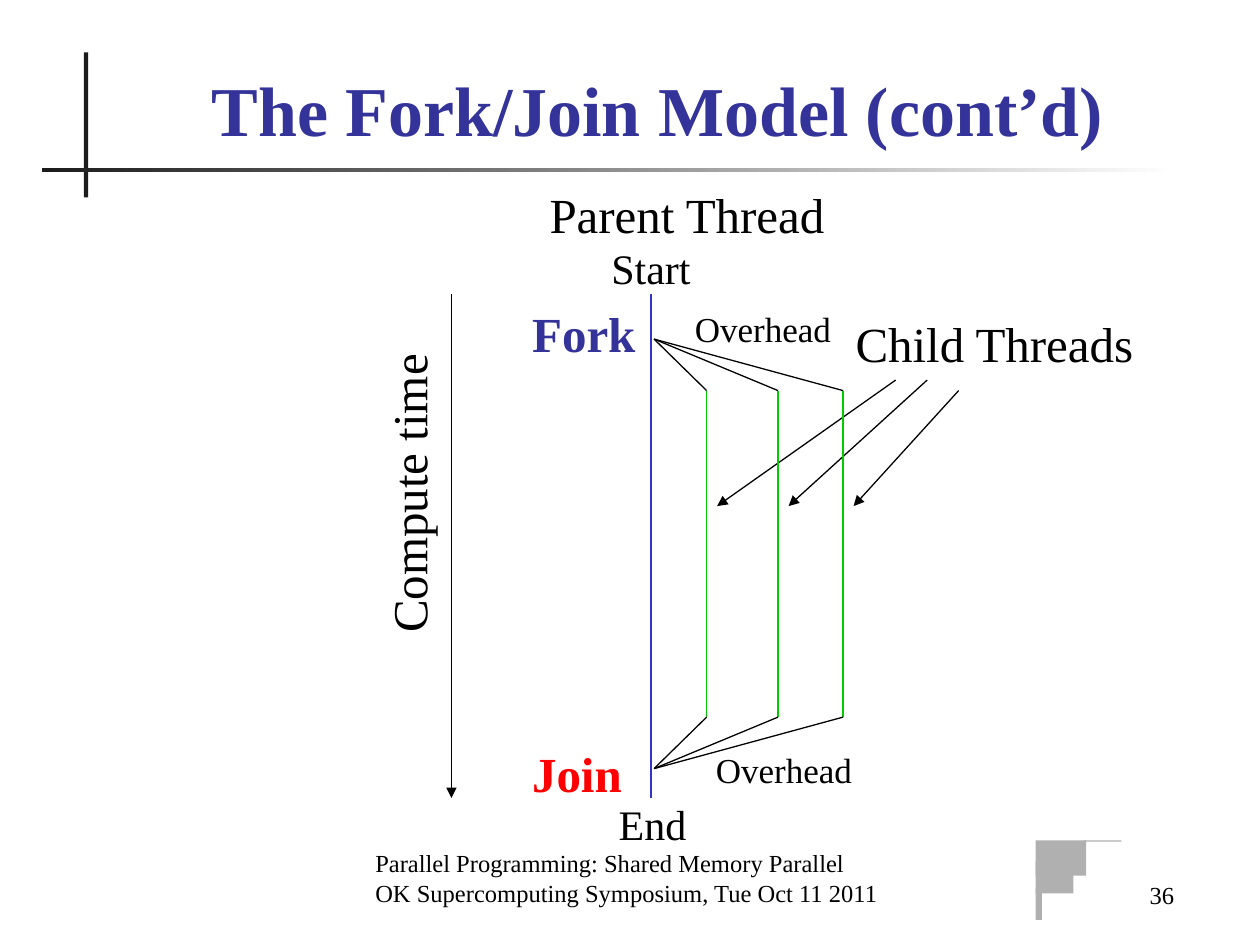
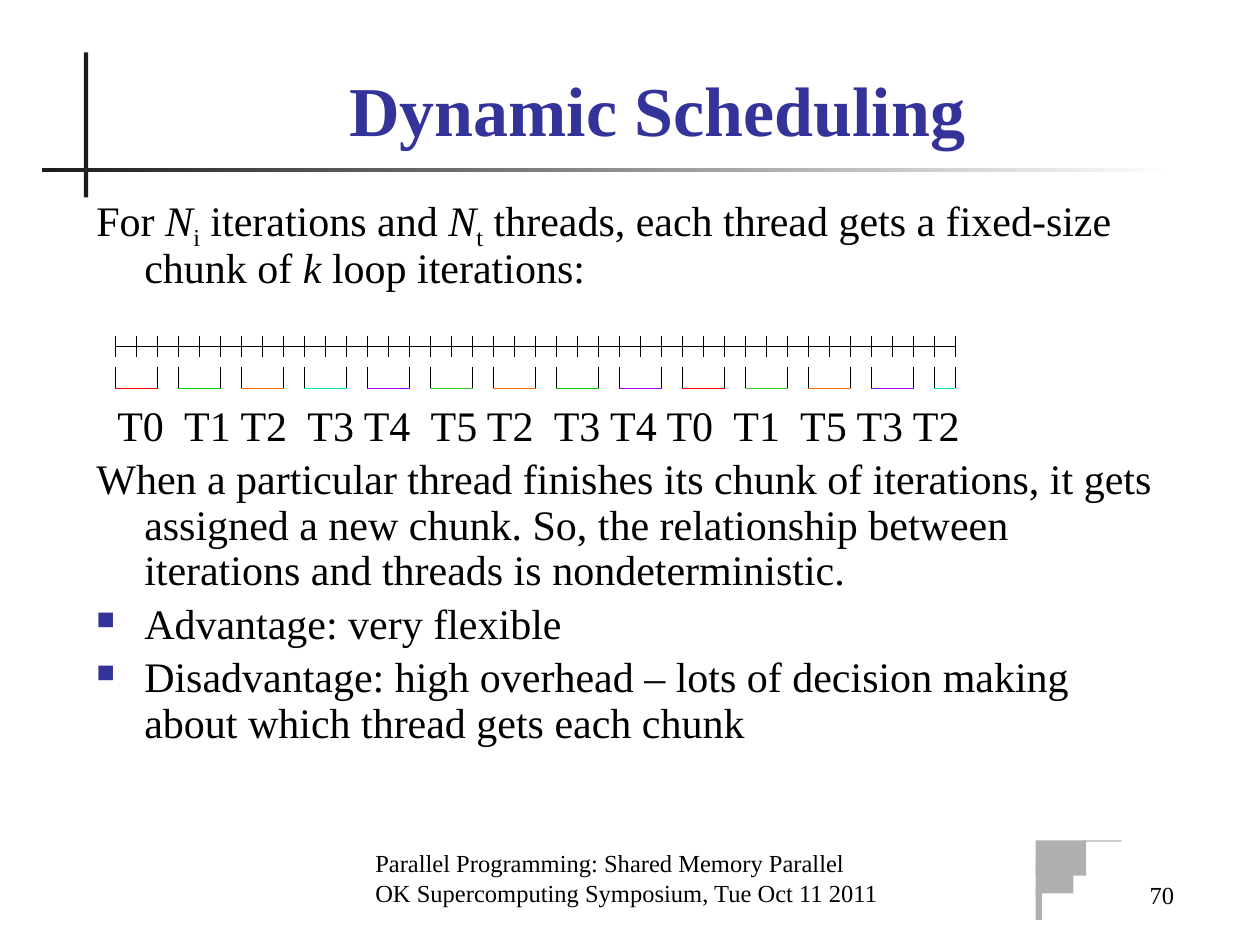
from dataclasses import dataclass
from itertools import accumulate

from lxml.etree import SubElement
from pptx import Presentation
from pptx.dml.color import RGBColor
from pptx.enum.shapes import MSO_CONNECTOR, MSO_SHAPE
from pptx.enum.text import MSO_ANCHOR as Anchor, PP_ALIGN as Align
from pptx.oxml.ns import qn
from pptx.util import Inches, Pt

FONT = "Times New Roman"
UNIT = Inches(10) / 120
BLACK = RGBColor(0x00, 0x00, 0x00)
WHITE = RGBColor(0xFF, 0xFF, 0xFF)
INK = RGBColor(0x1C, 0x1C, 0x1C)
GREY = RGBColor(0xB0, 0xB0, 0xB0)
NAVY = RGBColor(0x33, 0x33, 0x99)
BLUE = RGBColor(0x33, 0x33, 0xCC)
RED = RGBColor(0xFF, 0x00, 0x00)
GREEN = RGBColor(0x00, 0xCC, 0x00)
LEAF = RGBColor(0x33, 0xCC, 0x33)
ORANGE = RGBColor(0xFF, 0x66, 0x00)
TEAL = RGBColor(0x00, 0xE4, 0xA8)
PURPLE = RGBColor(0x99, 0x00, 0xFF)

FOOTER = ["Parallel Programming: Shared Memory Parallel",
          "OK Supercomputing Symposium, Tue Oct 11 2011"]
CHUNKS = [("T0", RED, 2), ("T1", GREEN, 2), ("T2", ORANGE, 1), ("T3", TEAL, 2),
          ("T4", PURPLE, 1), ("T5", LEAF, 2), ("T2", ORANGE, 1), ("T3", GREEN, 2),
          ("T4", PURPLE, 1), ("T0", RED, 1), ("T1", LEAF, 2), ("T5", ORANGE, 2),
          ("T3", PURPLE, 1), ("T2", TEAL, 1)]


@dataclass
class Box:
    """A region on the grid of 120 columns by 90 rows."""
    left: float
    top: float
    width: float
    height: float

    def inner(self, left, top, width, height):
        """Return a box whose corner is counted from this one's."""
        return Box(self.left + left, self.top + top, width, height)

    def emu(self):
        """Return left, top, width and height as slide lengths."""
        return [round(n * UNIT) for n in (self.left, self.top, self.width, self.height)]


PAGE = Box(0, 0, 120, 90)


def add_bar(slide, box, color):
    """Draw a plain rectangle without outline."""
    bar = slide.shapes.add_shape(MSO_SHAPE.RECTANGLE, *box.emu())
    bar.shadow.inherit = False
    bar.line.fill.background()
    bar.fill.solid()
    bar.fill.fore_color.rgb = color
    return bar


def add_line(slide, box, start, end, color=BLACK, arrow=False):
    """Draw a thin line between two grid points of a box."""
    ends = [round(n * UNIT) for col, row in (start, end)
            for n in (box.left + col, box.top + row)]
    line = slide.shapes.add_connector(MSO_CONNECTOR.STRAIGHT, *ends)
    line.line.color.rgb = color
    line.line.width = Pt(0.75)
    if arrow:
        SubElement(line.line._get_or_add_ln(), qn("a:tailEnd"), type="triangle")
    SubElement(line._element.spPr, qn("a:effectLst"))


def style(paragraph, size, color=BLACK, bold=False):
    """Set the font of a whole paragraph."""
    font = paragraph.font
    font.name, font.size, font.bold = FONT, Pt(size), bold
    font.color.rgb = color


def add_text(slide, box, lines, size, color=BLACK, bold=False, align=Align.LEFT,
             anchor=Anchor.TOP, wrap=True):
    """Place lines of one style in a text box."""
    holder = slide.shapes.add_textbox(*box.emu())
    frame = holder.text_frame
    frame.word_wrap, frame.vertical_anchor = wrap, anchor
    frame.text = "\n".join(lines)
    for paragraph in frame.paragraphs:
        paragraph.alignment = align
        style(paragraph, size, color, bold)
    return holder


def add_frame(slide, box, title, number):
    """Draw the title, its crossed rules and the footer."""
    add_bar(slide, box.inner(8, 5, 0.4, 13.8), INK)
    fill = add_bar(slide, box.inner(4, 16, 108, 0.4), INK).fill
    fill.gradient()
    fill.gradient_angle = 0
    for stop, color, position in zip(fill.gradient_stops, (INK, WHITE), (0, 1)):
        stop.color.rgb, stop.position = color, position
    steps = box.inner(98.64, 80.04, 8.2, 7.6)
    for step in [(0, 0, 4.8, 3.36), (0, 2.04, 3.6, 3), (0, 4.56, 0.6, 3),
                 (4.56, 0, 3.6, 0.12)]:
        add_bar(slide, steps.inner(*step), GREY)
    add_text(slide, box.inner(34.56, 81, 52.4, 6), FOOTER, 14, anchor=Anchor.BOTTOM)
    add_text(slide, box.inner(96, 81.2, 17, 6), [number], 14,
             align=Align.RIGHT, anchor=Anchor.BOTTOM)
    add_text(slide, box.inner(10, 6, 105.2, 8.9), [title], 40, NAVY, True,
             Align.CENTER, Anchor.BOTTOM)


def add_fork_join(slide, box):
    """Draw parent and child threads between fork and join."""
    first, last = 11, 59
    fork, join = (38.3, 15.3), (38.3, 56.2)
    child_top, child_end = 20.2, 51.3
    add_line(slide, box, (19, first), (19, last), arrow=True)
    add_line(slide, box, (38, first), (38, last), BLUE)
    pointers = [(61.3, 19.2), (64.3, 19.2), (67.3, 20.2)]
    for child, pointer in zip((43.3, 50.1, 56.3), pointers):
        add_line(slide, box, fork, (child, child_top))
        add_line(slide, box, (child, child_top), (child, child_end), GREEN)
        add_line(slide, box, join, (child, child_end))
        add_line(slide, box, pointer, (child + 1, 31.2), arrow=True)
    labels = [
        ("Parent Thread", (25.7, 0, 30, 6.8), 28, BLACK, Align.RIGHT),
        ("Fork", (23.7, 11.3, 14, 6.8), 28, NAVY, Align.RIGHT),
        ("Join", (22.4, 53.2, 14, 6.8), 28, RED, Align.RIGHT),
        ("Start", (32, 5.5, 12, 6), 24, BLACK, Align.CENTER),
        ("End", (32.15, 58.5, 12, 6), 24, BLACK, Align.CENTER),
        ("Child Threads", (56.3, 12.3, 30, 6.8), 28, BLACK, Align.LEFT),
        ("Overhead", (41, 11.7, 17, 5.2), 20, BLACK, Align.LEFT),
        ("Overhead", (43, 53.7, 17, 5.2), 20, BLACK, Align.LEFT),
    ]
    for label, place, size, color, align in labels:
        add_text(slide, box.inner(*place), [label], size, color, color != BLACK, align)
    axis = add_text(slide, box.inner(0.4, 26.6, 28.9, 6.8), ["Compute time"], 28, wrap=False)
    axis.rotation = 270


def add_iterations(slide, box):
    """Draw the ticked iteration line and a bracket per chunk."""
    add_line(slide, box, (0, 1), (box.width, 1))
    for tick in range(0, box.width + 1, 2):
        add_line(slide, box, (tick, 0), (tick, 2))
    for index, (_, color, _) in enumerate(CHUNKS):
        start = index * 6
        end = min(start + 4, box.width)
        add_line(slide, box, (start, 5), (end, 5), color)
        for side in (start, end):
            add_line(slide, box, (side, 3), (side, 5))


def set_indent(paragraph, bullet=False):
    """Give a paragraph its hanging indent and, if asked, a square bullet."""
    props = paragraph._p.get_or_add_pPr()
    props.set("marL", str(Inches(0.38)))
    props.set("indent", str(-Inches(0.38)))
    if bullet:
        SubElement(SubElement(props, qn("a:buClr")), qn("a:srgbClr"), val=str(NAVY))
        SubElement(props, qn("a:buSzPct"), val="60000")
        SubElement(props, qn("a:buChar"), char="■")


def set_thread_tabs(paragraph):
    """Set one tab stop per thread label, one or two spaces apart."""
    space, label = 6, 26.2
    tabs = SubElement(paragraph._p.get_or_add_pPr(), qn("a:tabLst"))
    for index, gaps in enumerate(accumulate(gap for _, _, gap in CHUNKS)):
        SubElement(tabs, qn("a:tab"), pos=str(Pt(gaps * space + index * label)), algn="l")


def add_schedule_text(slide, box):
    """Write the explanation around the thread labels."""
    intro = [("For ", ""), ("N", "italic"), ("i", "sub"), (" iterations and ", ""),
             ("N", "italic"), ("t", "sub"),
             (" threads, each thread gets a fixed-size chunk of ", ""),
             ("k", "italic"), (" loop iterations:", "")]
    threads = "".join("\t" + thread for thread, _, _ in CHUNKS)
    lines = [threads,
             "When a particular thread finishes its chunk of iterations, it gets assigned "
             "a new chunk. So, the relationship between iterations and threads is "
             "nondeterministic.",
             "Advantage: very flexible",
             "Disadvantage: high overhead – lots of decision making about which thread "
             "gets each chunk"]
    frame = add_text(slide, box, [], 24).text_frame
    opening = frame.paragraphs[0]
    set_indent(opening)
    opening.line_spacing = 0.9
    style(opening, 24)
    for text, kind in intro:
        run = opening.add_run()
        run.text = text
        if kind == "italic":
            run.font.italic = True
        elif kind == "sub":
            run.font._element.set("baseline", "-25000")
    for index, text in enumerate(lines):
        paragraph = frame.add_paragraph()
        paragraph.add_run().text = text
        if text == threads:
            set_thread_tabs(paragraph)
            paragraph.line_spacing, paragraph.space_before = 1.4, Pt(50)
        else:
            set_indent(paragraph, bullet=index > 1)
            paragraph.line_spacing, paragraph.space_before = 0.9, Pt(4.8)
        style(paragraph, 24)


def main():
    """Build both slides and save them."""
    deck = Presentation()
    deck.slide_width, deck.slide_height = Inches(10), Inches(7.5)
    blank = deck.slide_layouts[6]

    model = deck.slides.add_slide(blank)
    add_frame(model, PAGE, "The Fork/Join Model (cont’d)", "36")
    add_fork_join(model, PAGE.inner(24, 17, 86, 65))

    scheduling = deck.slides.add_slide(blank)
    add_frame(scheduling, PAGE, "Dynamic Scheduling", "70")
    add_schedule_text(scheduling, PAGE.inner(8, 18, 104, 61))
    add_iterations(scheduling, PAGE.inner(11, 32, 80, 5))

    deck.save("out.pptx")


if __name__ == "__main__":
    main()
